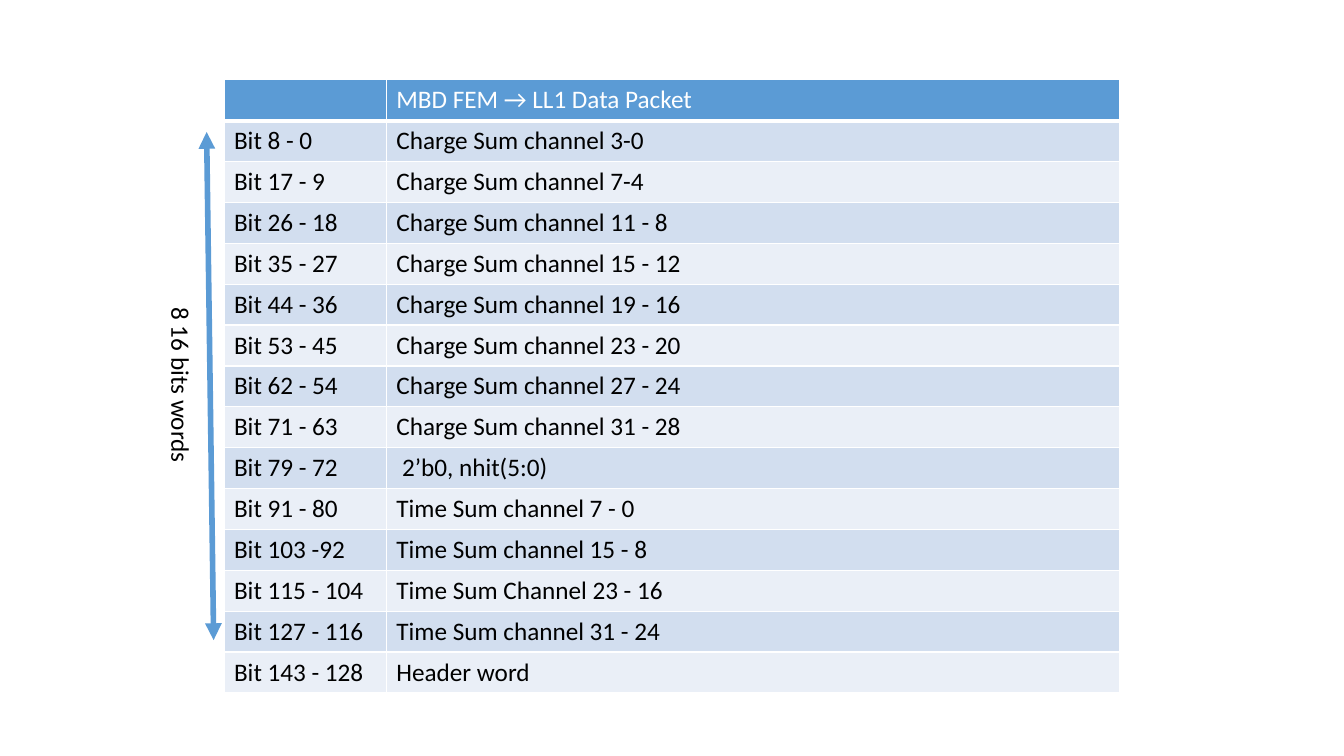
from lxml import etree
from pptx import Presentation
from pptx.dml.color import RGBColor
from pptx.enum.shapes import MSO_CONNECTOR
from pptx.enum.text import MSO_ANCHOR, MSO_AUTO_SIZE
from pptx.oxml.ns import qn
from pptx.util import Pt

STRAIGHT = MSO_CONNECTOR.STRAIGHT
TOP = MSO_ANCHOR.TOP
FIT_SHAPE = MSO_AUTO_SIZE.SHAPE_TO_FIT_TEXT

BLUE, WHITE, BLACK = "5B9BD5", "FFFFFF", "000000"
BANDS = ["EAEFF7", "D2DEEF"]

PACKET = [
    ("", "MBD FEM → LL1 Data Packet"),
    ("Bit 8 - 0", "Charge Sum channel 3-0"),
    ("Bit 17 - 9", "Charge Sum channel 7-4"),
    ("Bit 26 - 18", "Charge Sum channel 11 - 8"),
    ("Bit 35 - 27", "Charge Sum channel 15 - 12"),
    ("Bit 44 - 36", "Charge Sum channel 19 - 16"),
    ("Bit 53 - 45", "Charge Sum channel 23 - 20"),
    ("Bit 62 - 54", "Charge Sum channel 27 - 24"),
    ("Bit 71 - 63", "Charge Sum channel 31 - 28"),
    ("Bit 79 - 72", " 2’b0, nhit(5:0)"),
    ("Bit 91 - 80", "Time Sum channel 7 - 0"),
    ("Bit 103 -92", "Time Sum channel 15 - 8"),
    ("Bit 115 - 104", "Time Sum Channel 23 - 16"),
    ("Bit 127 - 116", "Time Sum channel 31 - 24"),
    ("Bit 143 - 128", "Header word"),
]
COLUMN_WIDTHS = [116, 524]
ROW_HEIGHT = 29.2


def rgb(value):
    return RGBColor.from_string(value)


def style_text(para, color):
    font = para.font
    font.name, font.size, font.bold = "Calibri", Pt(18), False
    font.color.rgb = rgb(color)


deck = Presentation()
deck.slide_width, deck.slide_height = Pt(960), Pt(540)
page = deck.slides.add_slide(deck.slide_layouts[6])

# Data packet table
table = page.shapes.add_table(
    len(PACKET), 2, Pt(160), Pt(57),
    Pt(sum(COLUMN_WIDTHS)), Pt(ROW_HEIGHT * len(PACKET))).table
for column, width in zip(table.columns, COLUMN_WIDTHS):
    column.width = Pt(width)
for row_index, words in enumerate(PACKET):
    header = row_index == 0
    table.rows[row_index].height = Pt(ROW_HEIGHT)
    for column_index, text in enumerate(words):
        cell = table.cell(row_index, column_index)
        cell.text = text
        cell.vertical_anchor = TOP
        style_text(cell.text_frame.paragraphs[0], WHITE if header else BLACK)
        cell.fill.solid()
        cell.fill.fore_color.rgb = rgb(BLUE if header else BANDS[row_index % 2])

        # White borders, heavier under the header
        properties = cell._tc.get_or_add_tcPr()
        for position, side in enumerate(["lnL", "lnR", "lnT", "lnB"]):
            weight = 3 if header and side == "lnB" else 1
            border = etree.Element(qn("a:" + side), w=str(Pt(weight)))
            fill = etree.SubElement(border, qn("a:solidFill"))
            etree.SubElement(fill, qn("a:srgbClr"), val=WHITE)
            properties.insert(position, border)

# Double arrow spanning the data words
arrow = page.shapes.add_connector(
    STRAIGHT, Pt(147.6), Pt(94.3), Pt(152.6), Pt(457.2))
arrow.line.color.rgb = rgb(BLUE)
arrow.line.width = Pt(4)
for end in ["headEnd", "tailEnd"]:
    etree.SubElement(arrow.line._get_or_add_ln(), qn("a:" + end), type="triangle")
etree.SubElement(arrow._element.spPr, qn("a:effectLst"))

# Rotated caption
caption = page.shapes.add_textbox(Pt(66.2), Pt(261.4), Pt(126.7), Pt(28.8))
caption.rotation = 90
frame = caption.text_frame
frame.word_wrap = False
frame.auto_size = FIT_SHAPE
frame.text = "8 16 bits words"
style_text(frame.paragraphs[0], BLACK)

deck.save("out.pptx")
